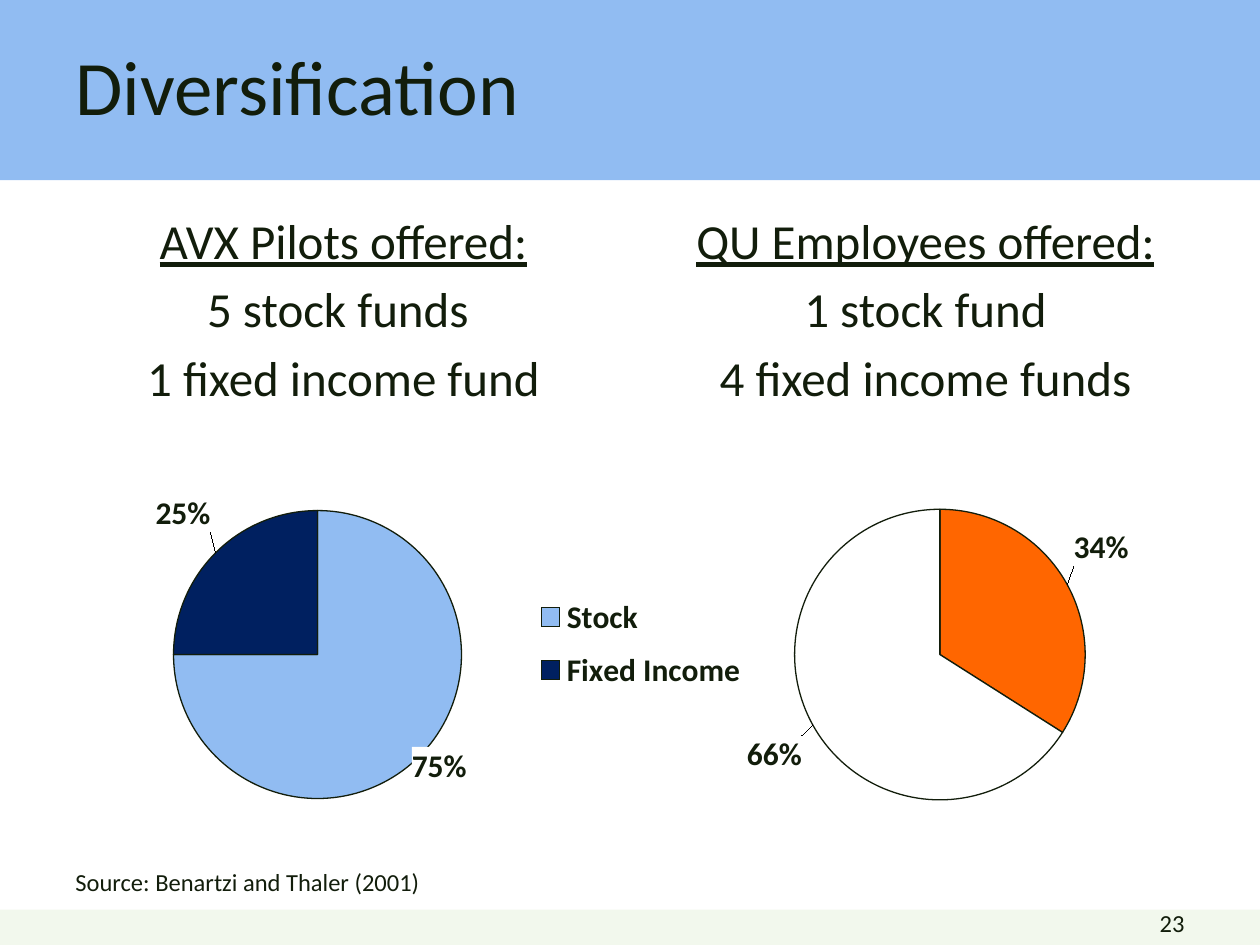
from lxml import etree
from pptx import Presentation
from pptx.chart.data import CategoryChartData
from pptx.dml.color import RGBColor
from pptx.enum.chart import XL_CHART_TYPE, XL_LEGEND_POSITION
from pptx.enum.shapes import MSO_SHAPE
from pptx.enum.text import MSO_ANCHOR, PP_ALIGN
from pptx.oxml import parse_xml
from pptx.util import Inches, Pt

RECTANGLE = MSO_SHAPE.RECTANGLE
PIE = XL_CHART_TYPE.PIE
LEGEND_RIGHT = XL_LEGEND_POSITION.RIGHT
LEFT, CENTER, RIGHT = PP_ALIGN.LEFT, PP_ALIGN.CENTER, PP_ALIGN.RIGHT
TOP, MIDDLE = MSO_ANCHOR.TOP, MSO_ANCHOR.MIDDLE

CHART_NS = "http://schemas.openxmlformats.org/drawingml/2006/chart"
DRAWING_NS = "http://schemas.openxmlformats.org/drawingml/2006/main"

WIDTH, HEIGHT = 10, 7.5
MARGIN = 0.5
COLUMN_WIDTH, COLUMN_STEP = 4.45, 4.62
CHART_TOP, CHART_HEIGHT = 3.75, 2.92
PIE_DIAMETER = 2.31

FONT = "Calibri"
INK, WHITE = "121D0B", "FFFFFF"
SKY, NAVY, ORANGE, PALE = "91BCF2", "002060", "FF6600", "F2F8ED"


def color(hex_string):
    return RGBColor.from_string(hex_string)


def style_font(font, size, bold=False, underline=False):
    font.name = FONT
    font.size = Pt(size)
    font.bold = bold
    font.underline = underline
    font.color.rgb = color(INK)


def add_band(slide, top, height, fill):
    shape = slide.shapes.add_shape(
        RECTANGLE, 0, Inches(top), Inches(WIDTH), Inches(height))
    shape.shadow.inherit = False
    shape.fill.solid()
    shape.fill.fore_color.rgb = color(fill)
    shape.line.fill.background()


def add_text(slide, lines, box, size, align=LEFT, anchor=TOP, wrap=True,
             space_before=0, underline_first=False):
    shape = slide.shapes.add_textbox(*map(Inches, box))
    frame = shape.text_frame
    frame.word_wrap = wrap
    frame.vertical_anchor = anchor
    for index, line in enumerate(lines):
        paragraph = frame.add_paragraph() if index else frame.paragraphs[0]
        paragraph.alignment = align
        paragraph.space_before = Pt(space_before)
        run = paragraph.add_run()
        run.text = line
        style_font(run.font, size, underline=underline_first and index == 0)


def make_layout(x, y, width=None, height=None, inner=False):
    """Manual chart layout in shares of the chart; without a size it is an offset."""
    layout = etree.Element(f"{{{CHART_NS}}}layout", nsmap={"c": CHART_NS})
    manual = etree.SubElement(layout, f"{{{CHART_NS}}}manualLayout")
    values = [("x", x), ("y", y)]
    if width is not None:
        values = [("xMode", "edge"), ("yMode", "edge"), *values,
                  ("w", width), ("h", height)]
    if inner:
        values.insert(0, ("layoutTarget", "inner"))
    for tag, value in values:
        etree.SubElement(manual, f"{{{CHART_NS}}}{tag}", val=str(value))
    return layout


def replace_layout(parent, layout, after=None):
    for old in parent.findall(f"{{{CHART_NS}}}layout"):
        parent.remove(old)
    if after is None:
        parent.insert(0, layout)
    else:
        parent.find(f"{{{CHART_NS}}}{after}").addnext(layout)


def style_label(point, series, index, offset):
    """Bold value on a white patch, moved from the centre of its slice."""
    style_font(point.data_label.font, 18, bold=True)
    label = series._element.xpath(f"c:dLbls/c:dLbl[c:idx/@val='{index}']")[0]
    replace_layout(label, make_layout(*offset), after="idx")
    patch = parse_xml(
        f'<c:spPr xmlns:c="{CHART_NS}" xmlns:a="{DRAWING_NS}"><a:solidFill>'
        f'<a:srgbClr val="{WHITE}"/></a:solidFill></c:spPr>')
    label.find(f"{{{CHART_NS}}}txPr").addprevious(patch)


def add_pie(slide, left, width, pie_left, categories, values, fills, offsets):
    data = CategoryChartData(number_format="0%")
    data.categories = categories
    data.add_series("Series 1", values)
    frame = slide.shapes.add_chart(
        PIE, Inches(left), Inches(CHART_TOP), Inches(width),
        Inches(CHART_HEIGHT), data)
    chart = frame.chart
    chart.has_title = False
    chart.has_legend = False
    style_font(chart.font, 18)
    plot = chart.plots[0]
    plot.vary_by_categories = True
    share = PIE_DIAMETER / CHART_HEIGHT
    replace_layout(
        chart._chartSpace.chart.plotArea,
        make_layout(round(pie_left / width, 2), round((1 - share) / 2, 2),
                    round(PIE_DIAMETER / width, 2), round(share, 2), inner=True))
    series = plot.series[0]
    for index, (fill, offset) in enumerate(zip(fills, offsets)):
        point = series.points[index]
        point.format.fill.solid()
        point.format.fill.fore_color.rgb = color(fill)
        point.format.line.color.rgb = color(INK)
        point.format.line.width = Pt(0.75)
        style_label(point, series, index, offset)
    return chart


def add_legend(chart):
    chart.has_legend = True
    legend = chart.legend
    legend.position = LEGEND_RIGHT
    legend.include_in_layout = False
    style_font(legend.font, 18, bold=True)
    replace_layout(legend._element, make_layout(0.65, 0.3, 0.34, 0.33),
                   after="legendPos")


def main():
    presentation = Presentation()
    presentation.slide_width = Inches(WIDTH)
    presentation.slide_height = Inches(HEIGHT)
    slide = presentation.slides.add_slide(presentation.slide_layouts[6])

    add_band(slide, 0, 1.43, SKY)
    add_band(slide, 7.22, 0.28, PALE)
    add_text(slide, ["Diversification"], (MARGIN, 0.28, 9.07, 0.79), 44,
             anchor=MIDDLE)

    offers = [
        ["AVX Pilots offered:", "5 stock funds ", "1 fixed income fund"],
        ["QU Employees offered:", "1 stock fund", "4 fixed income funds"],
    ]
    for column, lines in enumerate(offers):
        box = (MARGIN + column * COLUMN_STEP, 1.62, COLUMN_WIDTH, 2)
        add_text(slide, lines, box, 28, align=CENTER, space_before=5.6,
                 underline_first=True)

    pilots = add_pie(slide, 0.92, 5.08, 0.46, ["Stock", "Fixed Income"],
                     [0.75, 0.25], [SKY, NAVY], [(-0.02, -0.04), (0, -0.04)])
    add_legend(pilots)
    add_pie(slide, 5.75, 3.42, 0.55, ["1", "2"],
            [0.34, 0.66], [ORANGE, WHITE], [(0, -0.04), (-0.01, 0.02)])

    add_text(slide, ["Source: Benartzi and Thaler (2001)"],
             (MARGIN, 6.83, 2.96, 0.34), 14, wrap=False)
    add_text(slide, ["23"], (7.17, 7.16, 2.33, 0.31), 14, align=RIGHT)
    presentation.save("out.pptx")


if __name__ == "__main__":
    main()
